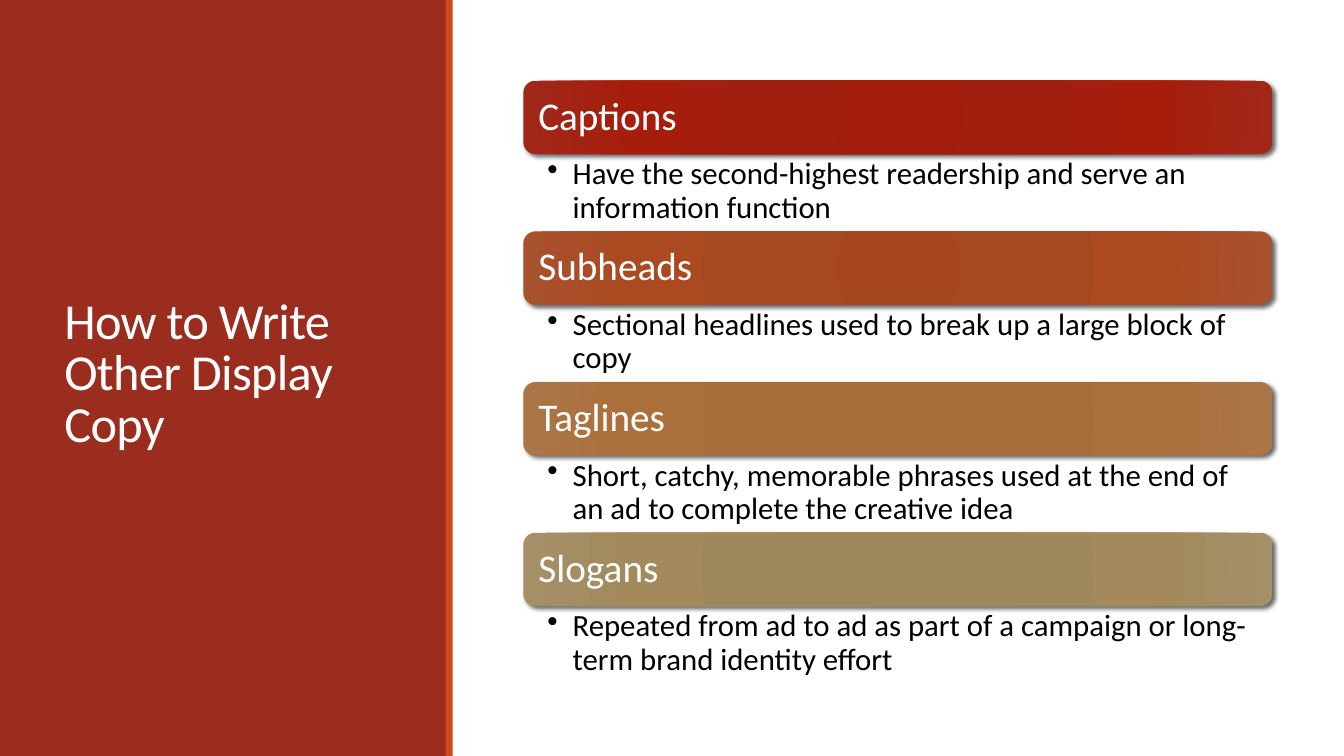
import pptx
import pptx.dml.color
import pptx.enum.shapes
import pptx.enum.text
import pptx.oxml
import pptx.oxml.ns
import pptx.util

Inches = pptx.util.Inches
Pt = pptx.util.Pt
SHAPES = pptx.enum.shapes.MSO_SHAPE
ANCHORS = pptx.enum.text.MSO_ANCHOR

COLORS = {"panel": "9B2D1F", "accent": "D34817", "light": "FFFFFF",
          "text": "000000", "shadow": "000000"}
STOPS = (0, 34, 70, 100)

# Heading, explanation, gradient colours from the centre outwards
SECTIONS = [
    ("Captions",
     "Have the second-highest readership and serve an information function",
     ("A21D0C", "A01F0F", "A61D0C", "A12819")),
    ("Subheads",
     "Sectional headlines used to break up a large block of copy",
     ("A74720", "A64923", "AB4921", "A8512D")),
    ("Taglines",
     "Short, catchy, memorable phrases used at the end of an ad "
     "to complete the creative idea",
     ("A76C39", "A76E3C", "AB6F3B", "AA7547")),
    ("Slogans",
     "Repeated from ad to ad as part of a campaign or long-term "
     "brand identity effort",
     ("9F875B", "9F885D", "A38A5D", "A58F67")),
]

LEFT, TOP, WIDTH = 5.19, 0.8, 7.43
BAR_HEIGHT, DETAIL_HEIGHT, PITCH = 0.73, 0.76, 1.495
INSET = 0.03


def element(xml):
    namespace = pptx.oxml.ns.nsdecls("a")
    return pptx.oxml.parse_xml(xml.replace("{ns}", namespace, 1))


def rgb(name):
    return pptx.dml.color.RGBColor.from_string(COLORS[name])


class SlideBuilder:
    font = "Calibri"

    def __init__(self, page):
        self.page = page

    def block(self, place, color, kind=SHAPES.RECTANGLE):
        shape = self.page.shapes.add_shape(kind, *map(Inches, place))
        shape.fill.solid()
        shape.fill.fore_color.rgb = rgb(color)
        shape.line.fill.background()
        shape.shadow.inherit = False
        return shape

    def gradient_bar(self, place, colors):
        bar = self.block(place, "panel", SHAPES.ROUNDED_RECTANGLE)
        properties = bar._element.spPr
        stops = "".join(
            f'<a:gs pos="{stop * 1000}"><a:srgbClr val="{color}"/></a:gs>'
            for stop, color in zip(STOPS, colors))
        properties.replace(
            properties.find(pptx.oxml.ns.qn("a:solidFill")),
            element(f'<a:gradFill {{ns}} rotWithShape="1"><a:gsLst>{stops}</a:gsLst>'
                    '<a:path path="circle"><a:fillToRect l="100000" t="100000" '
                    'r="100000" b="100000"/></a:path></a:gradFill>'))
        properties.replace(
            properties.find(pptx.oxml.ns.qn("a:effectLst")),
            element(f'<a:effectLst {{ns}}><a:outerShdw blurRad="{Pt(3)}" '
                    f'dist="{Pt(2)}" dir="2700000" rotWithShape="0">'
                    f'<a:srgbClr val="{COLORS["shadow"]}"><a:alpha val="60000"/>'
                    '</a:srgbClr></a:outerShdw></a:effectLst>'))

    def text(self, place, words, size, color, spacing, insets=(0.1, 0.05, 0.1, 0.05),
             anchor=ANCHORS.MIDDLE, after=0, bullet=False, tracking=0):
        box = self.page.shapes.add_textbox(*map(Inches, place))
        frame = box.text_frame
        sides = ("margin_left", "margin_top", "margin_right", "margin_bottom")
        layout = dict(zip(sides, map(Inches, insets)))
        layout.update(word_wrap=True, vertical_anchor=anchor)
        for name, value in layout.items():
            setattr(frame, name, value)

        para = frame.paragraphs[0]
        para.line_spacing = spacing
        properties = para._p.get_or_add_pPr()
        if after:
            properties.append(element(
                f'<a:spcAft {{ns}}><a:spcPct val="{after * 1000}"/></a:spcAft>'))
        if bullet:
            para.level = 1
            properties.set("marL", str(Inches(0.25)))
            properties.set("indent", str(Inches(-0.25)))
            properties.append(element('<a:buChar {ns} char="•"/>'))

        span = para.add_run()
        span.text = words
        for name, value in {"name": self.font, "size": Pt(size)}.items():
            setattr(span.font, name, value)
        span.font.color.rgb = rgb(color)
        if tracking:
            span._r.get_or_add_rPr().set("spc", str(round(tracking * 100)))

    def section(self, top, heading, detail, colors):
        self.gradient_bar((LEFT, top, WIDTH, BAR_HEIGHT), colors)
        self.text((LEFT + INSET, top + INSET, WIDTH - 2 * INSET, BAR_HEIGHT - 2 * INSET),
                  heading, 28, "light", 0.9, insets=(0.12,) * 4, after=35)
        self.text((LEFT, top + BAR_HEIGHT, WIDTH, DETAIL_HEIGHT),
                  detail, 22, "text", 0.9, insets=(0.24, 0.04, 0.22, 0.04),
                  anchor=ANCHORS.TOP, after=20, bullet=True)


def main():
    deck = pptx.Presentation()
    deck.slide_width, deck.slide_height = Inches(13.33), Inches(7.5)
    builder = SlideBuilder(deck.slides.add_slide(deck.slide_layouts[6]))

    # Title panel
    builder.block((0, 0, 4.43, 7.5), "panel")
    builder.text((0.54, 0.57, 3.37, 6.31), "How to Write Other Display Copy",
                 36, "light", 0.85, tracking=-0.5)
    builder.block((4.42, 0, 0.07, 7.5), "accent")

    # Stack of headed sections
    for index, section in enumerate(SECTIONS):
        builder.section(TOP + index * PITCH, *section)

    deck.save("out.pptx")


if __name__ == "__main__":
    main()
